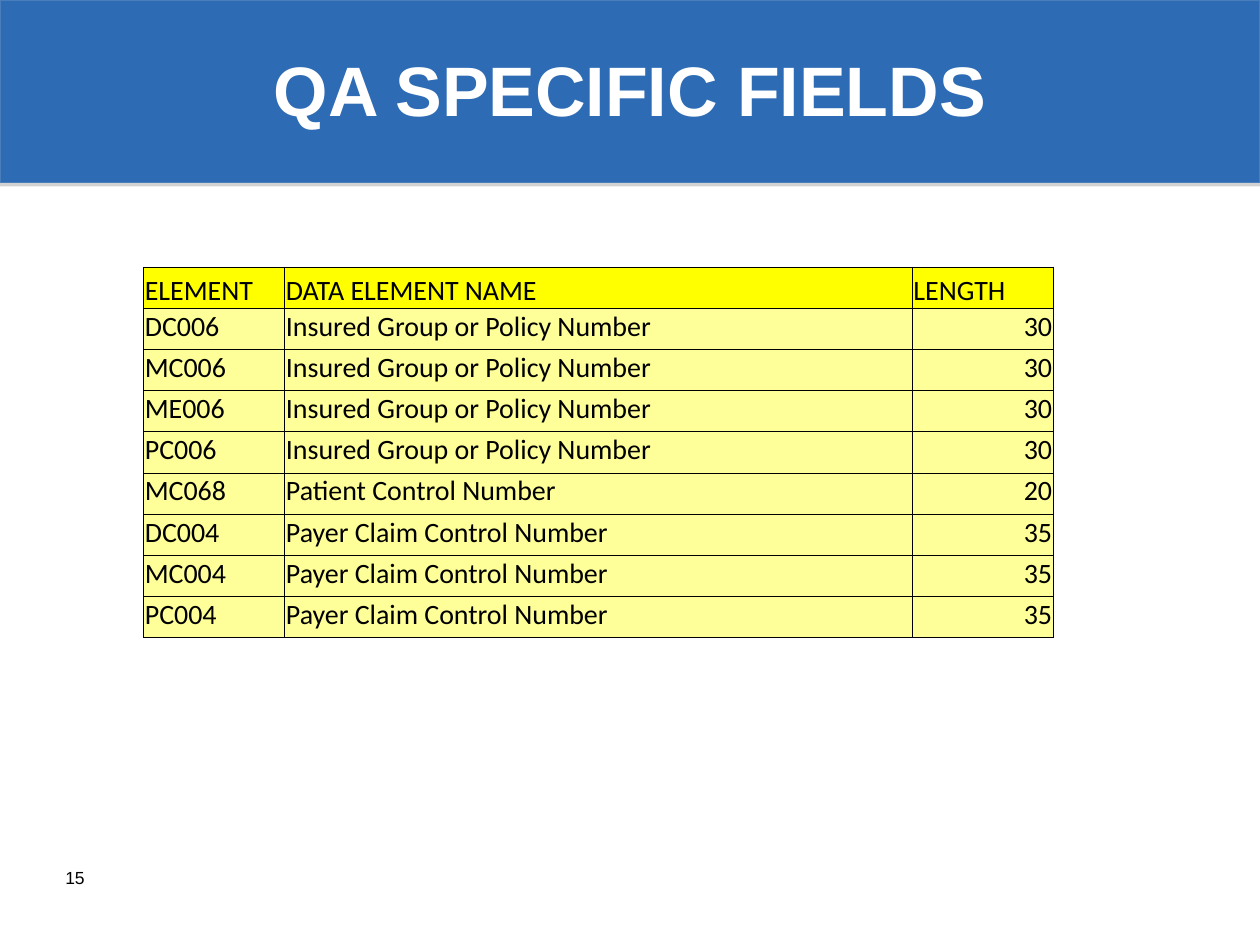
from pptx import Presentation
from pptx.dml.color import RGBColor
from pptx.enum.shapes import MSO_SHAPE
from pptx.enum.text import MSO_ANCHOR, PP_ALIGN
from pptx.oxml import parse_xml
from pptx.oxml.ns import nsdecls
from pptx.util import Inches, Pt

TITLE = "QA SPECIFIC FIELDS"
PAGE = "15"
HEADER = ("ELEMENT", "DATA ELEMENT NAME", "LENGTH")
FIELDS = [
    ("DC006", "Insured Group or Policy Number", 30),
    ("MC006", "Insured Group or Policy Number", 30),
    ("ME006", "Insured Group or Policy Number", 30),
    ("PC006", "Insured Group or Policy Number", 30),
    ("MC068", "Patient Control Number", 20),
    ("DC004", "Payer Claim Control Number", 35),
    ("MC004", "Payer Claim Control Number", 35),
    ("PC004", "Payer Claim Control Number", 35),
]

THEME = {
    "band": "2D6BB5", "band_line": "4A7EBB", "shadow": "808080",
    "header": "FFFF00", "row": "FFFF99", "border": "000000",
    "title": {"name": "Arial", "size": Pt(40), "bold": True, "color": "FFFFFF"},
    "page": {"name": "Arial", "size": Pt(10), "color": "000000"},
    "cell": {"name": "Calibri", "size": Pt(16), "color": "000000"},
}
COL_WIDTHS = (1.12, 4.98, 1.12)
ROW_HEIGHT = 0.327
CELL_FORMAT = {"margin_left": Inches(0.01), "margin_right": Inches(0.01),
               "margin_top": Inches(0.01), "margin_bottom": 0}


def set_text(tf, text, style, align=PP_ALIGN.LEFT):
    p = tf.paragraphs[0]
    p.alignment = align
    r = p.add_run()
    r.text = text
    for key, value in style.items():
        if key == "color":
            r.font.color.rgb = RGBColor.from_string(value)
        else:
            setattr(r.font, key, value)


def fill_solid(fill, color):
    fill.solid()
    fill.fore_color.rgb = RGBColor.from_string(color)


def add_band(s):
    """Draw the title band with its shadow, behind everything else."""
    sp = s.shapes.add_shape(MSO_SHAPE.RECTANGLE, 0, 0, Inches(10), Inches(1.45))
    fill_solid(sp.fill, THEME["band"])
    fill_solid(sp.line.fill, THEME["band_line"])
    sp.line.width = Pt(0.75)
    sp.shadow.inherit = False
    effects = sp._element.spPr.find("{*}effectLst")
    effects.append(parse_xml(
        f'<a:outerShdw {nsdecls("a")} blurRad="0" dist="{Pt(1.8)}" dir="5400000" '
        f'rotWithShape="0"><a:srgbClr val="{THEME["shadow"]}">'
        '<a:alpha val="35000"/></a:srgbClr></a:outerShdw>'))
    s.shapes._spTree.insert(2, sp._element)


def add_borders(cell):
    tc_pr = cell._tc.get_or_add_tcPr()
    for side in ("lnL", "lnR", "lnT", "lnB"):
        tc_pr.append(parse_xml(
            f'<a:{side} {nsdecls("a")} w="{Pt(0.5)}"><a:solidFill>'
            f'<a:srgbClr val="{THEME["border"]}"/></a:solidFill></a:{side}>'))


def add_fields_table(s):
    rows = [HEADER, *FIELDS]
    table = s.shapes.add_table(
        len(rows), len(HEADER), Inches(1.14), Inches(2.12),
        Inches(sum(COL_WIDTHS)), Inches(ROW_HEIGHT * len(rows))).table
    for col, width in zip(table.columns, COL_WIDTHS):
        col.width = Inches(width)
    for i, row in enumerate(rows):
        for j, value in enumerate(row):
            cell = table.cell(i, j)
            for key, setting in CELL_FORMAT.items():
                setattr(cell, key, setting)
            cell.vertical_anchor = MSO_ANCHOR.TOP if i else MSO_ANCHOR.BOTTOM
            add_borders(cell)
            fill_solid(cell.fill, THEME["row" if i else "header"])
            align = PP_ALIGN.RIGHT if isinstance(value, int) else PP_ALIGN.LEFT
            set_text(cell.text_frame, str(value), THEME["cell"], align)


def main():
    prs = Presentation()
    prs.slide_width, prs.slide_height = Inches(10), Inches(7.5)
    s = prs.slides.add_slide(prs.slide_layouts[5])
    add_band(s)

    title = s.shapes.title
    title.left, title.top = Inches(0.5), Inches(0.08)
    title.width, title.height = Inches(9), Inches(1.25)
    title.text_frame.vertical_anchor = MSO_ANCHOR.MIDDLE
    set_text(title.text_frame, TITLE, THEME["title"], PP_ALIGN.CENTER)

    page = s.shapes.add_textbox(Inches(0.42), Inches(6.83), Inches(2.33), Inches(0.4))
    page.text_frame.word_wrap = True
    set_text(page.text_frame, PAGE, THEME["page"])

    add_fields_table(s)
    prs.save("out.pptx")


if __name__ == "__main__":
    main()
